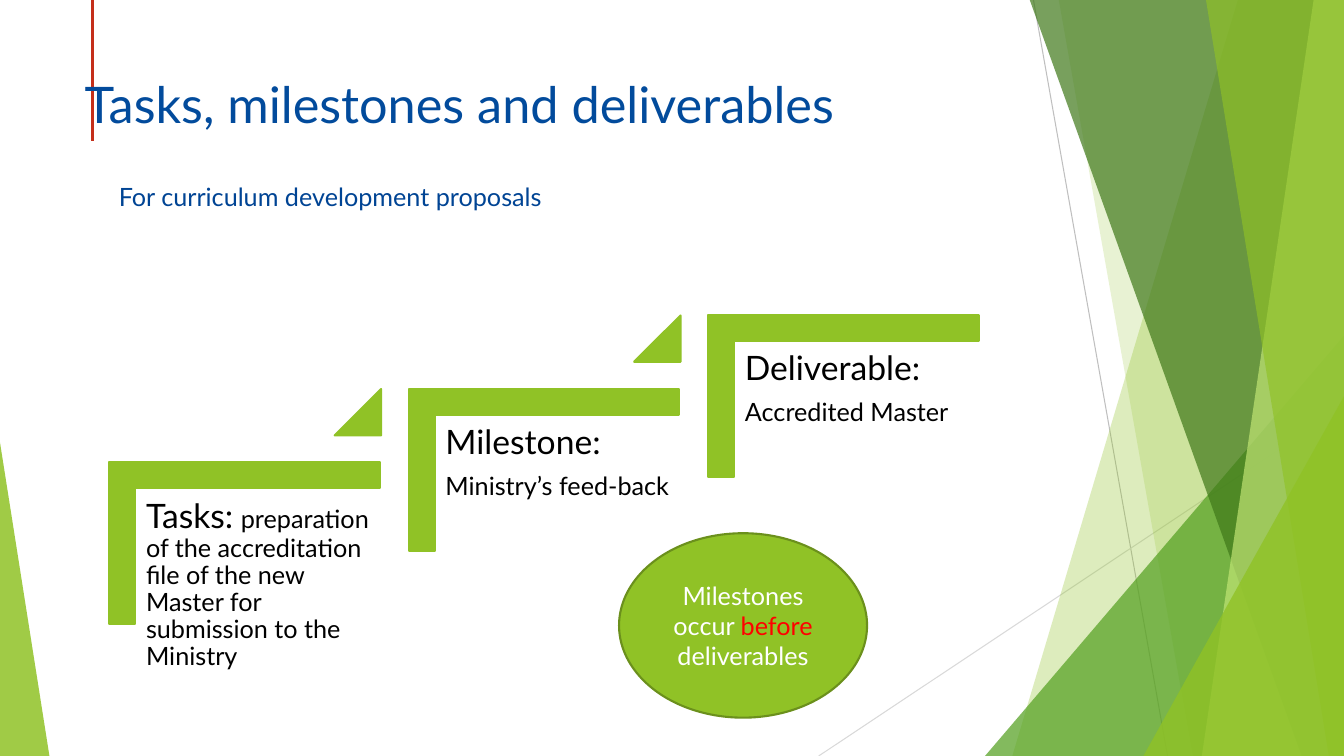
from lxml.etree import SubElement
from pptx import Presentation
from pptx.dml.color import RGBColor
from pptx.enum.shapes import MSO_CONNECTOR, MSO_SHAPE
from pptx.enum.text import MSO_ANCHOR, MSO_AUTO_SIZE, PP_ALIGN
from pptx.oxml.ns import qn
from pptx.util import Inches, Pt

GREEN = RGBColor(0x90, 0xC2, 0x26)
MID_GREEN = RGBColor(0x54, 0xA0, 0x21)
DARK_GREEN = RGBColor(0x3F, 0x78, 0x19)
PALE_GREEN = RGBColor(0xC0, 0xE4, 0x74)
OLIVE = RGBColor(0x6B, 0x90, 0x1C)
TITLE_BLUE = RGBColor(0x02, 0x4B, 0x9C)
SUBTITLE_BLUE = RGBColor(0x00, 0x44, 0x94)
BRICK = RGBColor(0xC4, 0x2F, 0x1A)
RED = RGBColor(0xFF, 0x00, 0x00)
GREY = RGBColor(0xBF, 0xBF, 0xBF)
LIGHT_GREY = RGBColor(0xD9, 0xD9, 0xD9)
WHITE = RGBColor(0xFF, 0xFF, 0xFF)
BLACK = RGBColor(0x00, 0x00, 0x00)


def paint(shape, fill, line=None, opacity=100):
    shape.shadow.inherit = False
    shape.fill.solid()
    shape.fill.fore_color.rgb = fill
    if opacity < 100:
        color = shape.fill._xPr.find(qn("a:solidFill"))[0]
        SubElement(color, qn("a:alpha"), val=str(opacity * 1000))
    if line is None:
        shape.line.fill.background()
    else:
        shape.line.color.rgb = line
        shape.line.width = Pt(1.5)


def add_run(paragraph, text, size, color):
    run = paragraph.add_run()
    run.text = text
    run.font.name = "Lato"
    run.font.size = Pt(size)
    run.font.color.rgb = color


presentation = Presentation()
presentation.slide_width = Inches(13.33)
presentation.slide_height = Inches(7.5)
slide = presentation.slides.add_slide(presentation.slide_layouts[5])
shapes = slide.shapes

# Thin background lines and the red title rule
for x1, y1, x2, y2, color, width in [
    (10.25, 0, 11.58, 7.5, GREY, 0.75),
    (13.33, 4.03, 8.12, 7.5, LIGHT_GREY, 0.75),
    (0.92, 0, 0.92, 1.4, BRICK, 2.25),
]:
    line = shapes.add_connector(
        MSO_CONNECTOR.STRAIGHT, Inches(x1), Inches(y1), Inches(x2), Inches(y2))
    line.line.color.rgb = color
    line.line.width = Pt(width)
    SubElement(line._element.spPr, qn("a:effectLst"))

# Translucent facets: bands by top and bottom x, triangles by box and apex
for kind, geometry, color, opacity in [
    ("band", (12.28, 10.04), GREEN, 30),
    ("band", (10.5, 11.83), GREEN, 20),
    ("triangle", (9.77, 3.33, 3.56, 4.17, 1), MID_GREEN, 72),
    ("band", (10.21, 12.91), DARK_GREEN, 70),
    ("band", (13.03, 11.92), PALE_GREEN, 70),
    ("band", (11.96, 13.18), GREEN, 65),
    ("triangle", (11.34, 3.93, 1.99, 3.57, 1), GREEN, 80),
    ("triangle", (0, 4.39, 0.49, 3.11, 0), GREEN, 85),
]:
    if kind == "band":
        top_x, bottom_x = geometry
        builder = shapes.build_freeform(Inches(top_x), Inches(-0.01))
        builder.add_line_segments([
            (Inches(13.33), Inches(-0.01)),
            (Inches(13.33), Inches(7.5)),
            (Inches(bottom_x), Inches(7.5)),
        ], close=True)
        facet = builder.convert_to_shape()
    else:
        *box, apex = geometry
        facet = shapes.add_shape(MSO_SHAPE.ISOSCELES_TRIANGLE, *map(Inches, box))
        facet.adjustments[0] = apex
    paint(facet, color, opacity=opacity)

# Title, placed in front of the background
title = shapes.title
shapes._spTree.append(title._element)
title.left, title.top = Inches(0.74), Inches(0.67)
title.width, title.height = Inches(9.4), Inches(0.72)
title.text_frame.vertical_anchor = MSO_ANCHOR.MIDDLE
title.text_frame.auto_size = MSO_AUTO_SIZE.NONE
paragraph = title.text_frame.paragraphs[0]
paragraph.alignment = PP_ALIGN.LEFT
add_run(paragraph, "Tasks, milestones and deliverables", 36, TITLE_BLUE)

# Rising steps, each a list of paragraphs made of (text, size) runs
steps = [
    [[("Tasks:", 24), (" ", 21),
      ("preparation of the accreditation file of the new Master "
       "for submission to the Ministry", 18)]],
    [[("Milestone:", 24)], [("Ministry’s feed-back", 18)]],
    [[("Deliverable:", 24)], [("Accredited Master", 18)]],
]
for index, step in enumerate(steps):
    dx, dy = 2.97 * index, -0.73 * index
    corner = shapes.add_shape(
        MSO_SHAPE.CORNER, Inches(1.62 + dx), Inches(4.05 + dy), Inches(1.61), Inches(2.68))
    corner.rotation = 90
    corner.adjustments[0] = corner.adjustments[1] = 0.16
    paint(corner, GREEN, GREEN)

    text_box = shapes.add_textbox(
        Inches(1.35 + dx), Inches(4.85 + dy), Inches(2.42), Inches(2.12))
    frame = text_box.text_frame
    frame.word_wrap = True
    frame.margin_left = frame.margin_right = Inches(0.1)
    frame.margin_top = frame.margin_bottom = Inches(0.1)
    for number, runs in enumerate(step):
        paragraph = frame.add_paragraph() if number else frame.paragraphs[0]
        paragraph.line_spacing = 0.9
        paragraph.space_after = Pt(8.4)
        for text, size in runs:
            add_run(paragraph, text, size, BLACK)

    if index < len(steps) - 1:
        triangle = shapes.add_shape(
            MSO_SHAPE.ISOSCELES_TRIANGLE,
            Inches(3.32 + dx), Inches(3.86 + dy), Inches(0.46), Inches(0.46))
        triangle.adjustments[0] = 1
        paint(triangle, GREEN, GREEN)

# Subtitle
subtitle = shapes.add_textbox(Inches(1.08), Inches(1.75), Inches(4.63), Inches(0.4))
subtitle.text_frame.word_wrap = True
subtitle.text_frame.auto_size = MSO_AUTO_SIZE.SHAPE_TO_FIT_TEXT
add_run(subtitle.text_frame.paragraphs[0],
        "For curriculum development proposals", 18, SUBTITLE_BLUE)

# Reminder ellipse
reminder = shapes.add_shape(
    MSO_SHAPE.OVAL, Inches(6.14), Inches(5.29), Inches(2.46), Inches(1.83))
paint(reminder, GREEN, OLIVE)
reminder.text_frame.word_wrap = True
reminder.text_frame.vertical_anchor = MSO_ANCHOR.MIDDLE
paragraph = reminder.text_frame.paragraphs[0]
paragraph.alignment = PP_ALIGN.CENTER
for text, color in [("Milestones occur ", WHITE), ("before ", RED), ("deliverables", WHITE)]:
    add_run(paragraph, text, 18, color)

presentation.save("out.pptx")
